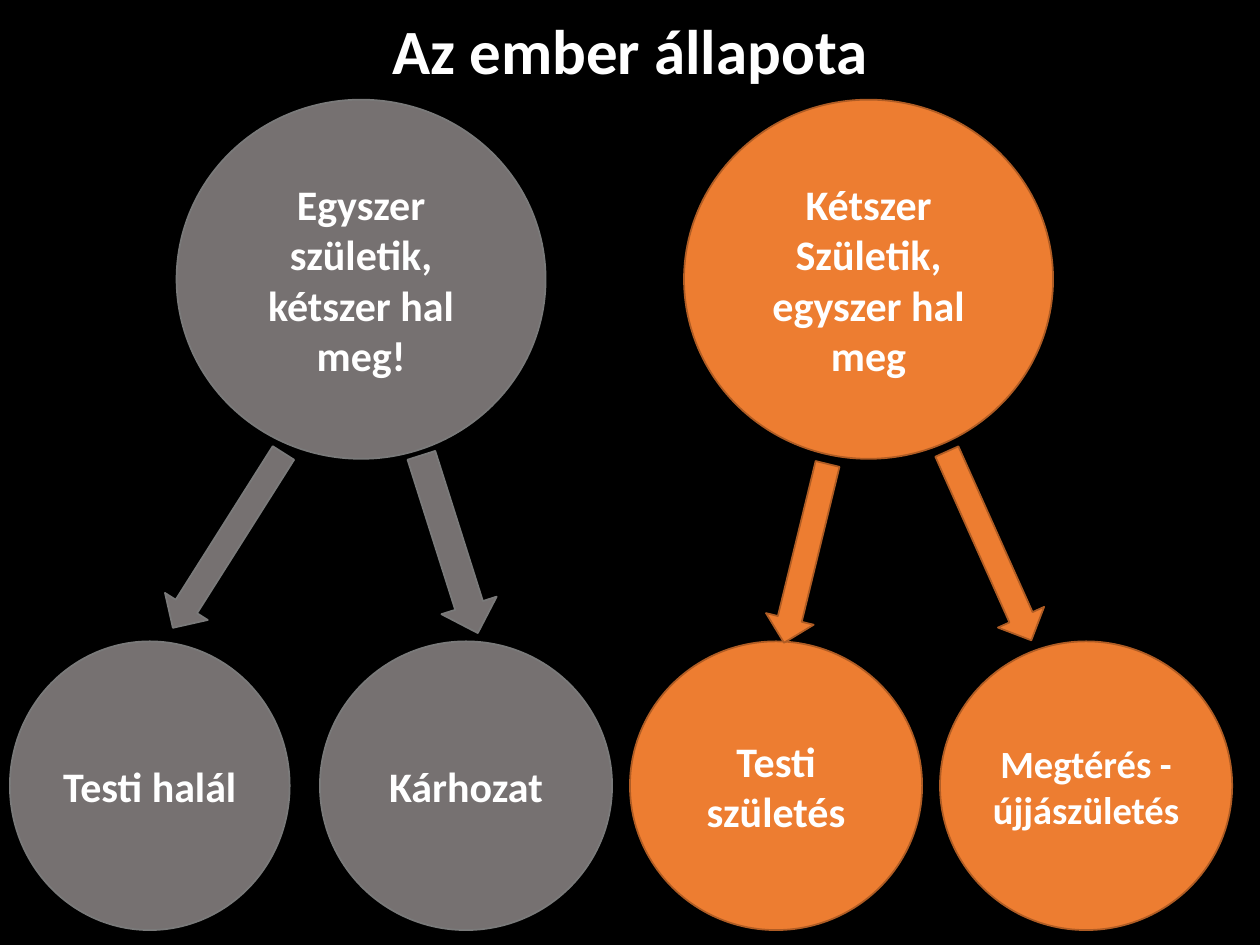
"""Build the slide on the two states of man."""
from pptx import Presentation
from pptx import util as u
from pptx.dml import color
from pptx.enum import shapes, text

HUES = {"back": "000000", "text": "FFFFFF", "gray": "767171", "gray_line": "7A7A7A",
        "gold": "ED7D31", "gold_line": "AF5C24"}


def tint(name):
    return color.RGBColor.from_string(HUES[name])


def draw(kind, box, hue):
    form = page.shapes.add_shape(kind, *[u.Cm(n) for n in box])
    form.shadow.inherit = False
    form.fill.solid()
    form.fill.fore_color.rgb = tint(hue)
    form.line.color.rgb = tint(hue + "_line")
    form.line.width = u.Pt(1)
    return form


deck = Presentation()
deck.slide_width, deck.slide_height = u.Cm(25.4), u.Cm(19.05)
page = deck.slides.add_slide(deck.slide_layouts[6])
page.background.fill.solid()
page.background.fill.fore_color.rgb = tint("back")

title = page.shapes.add_textbox(u.Cm(0), u.Cm(0.28), u.Cm(25.4), u.Cm(3.45))
title.text_frame.word_wrap = True
title.text_frame.text = "Az ember állapota"
head = title.text_frame.paragraphs[0]
head.line_spacing = 0.9
head.space_before = u.Pt(10)
labels = [(title.text_frame, 36)]

top, low = (2.01, 7.44, 7.24), (12.93, 5.89, 5.82)
discs = [
    (3.56, top, "gray", "Egyszer születik, kétszer hal meg!", 24),
    (0.2, (12.93, 5.64, 5.82), "gray", "Testi halál", 24),
    (6.45, low, "gray", "Kárhozat", 24),
    (12.7, low, "gold", "Testi születés", 24),
    (18.95, low, "gold", "Megtérés - újjászületés", 22),
    (13.79, top, "gold", "Kétszer\nSzületik, egyszer hal meg", 24),
]
for left, (y, wide, high), hue, words, size in discs:
    disc = draw(shapes.MSO_SHAPE.OVAL, (left, y, wide, high), hue)
    frame = disc.text_frame
    frame.word_wrap = True
    frame.vertical_anchor = text.MSO_ANCHOR.MIDDLE
    frame.margin_left = frame.margin_right = u.Cm(0.19)
    frame.margin_top = frame.margin_bottom = u.Cm(0.1)
    frame.text = words
    labels.append((frame, size))

for frame, size in labels:
    for para in frame.paragraphs:
        para.alignment = text.PP_ALIGN.CENTER
        for run in para.runs:
            run.font.name = "Calibri"
            run.font.size = u.Pt(size)
            run.font.bold = True
            run.font.color.rgb = tint("text")

arrows = [
    ((4.09, 8.81, 1.02, 4.17), 32.3, "gray"),
    ((15.75, 9.3, 0.99, 3.71), 13.7, "gold"),
    ((8.48, 9.09, 1.17, 3.76), 342.4, "gray"),
    ((19.43, 8.92, 1.02, 4.17), 335.9, "gold"),
]
for box, turn, hue in arrows:
    draw(shapes.MSO_SHAPE.DOWN_ARROW, box, hue).rotation = turn

deck.save("out.pptx")
